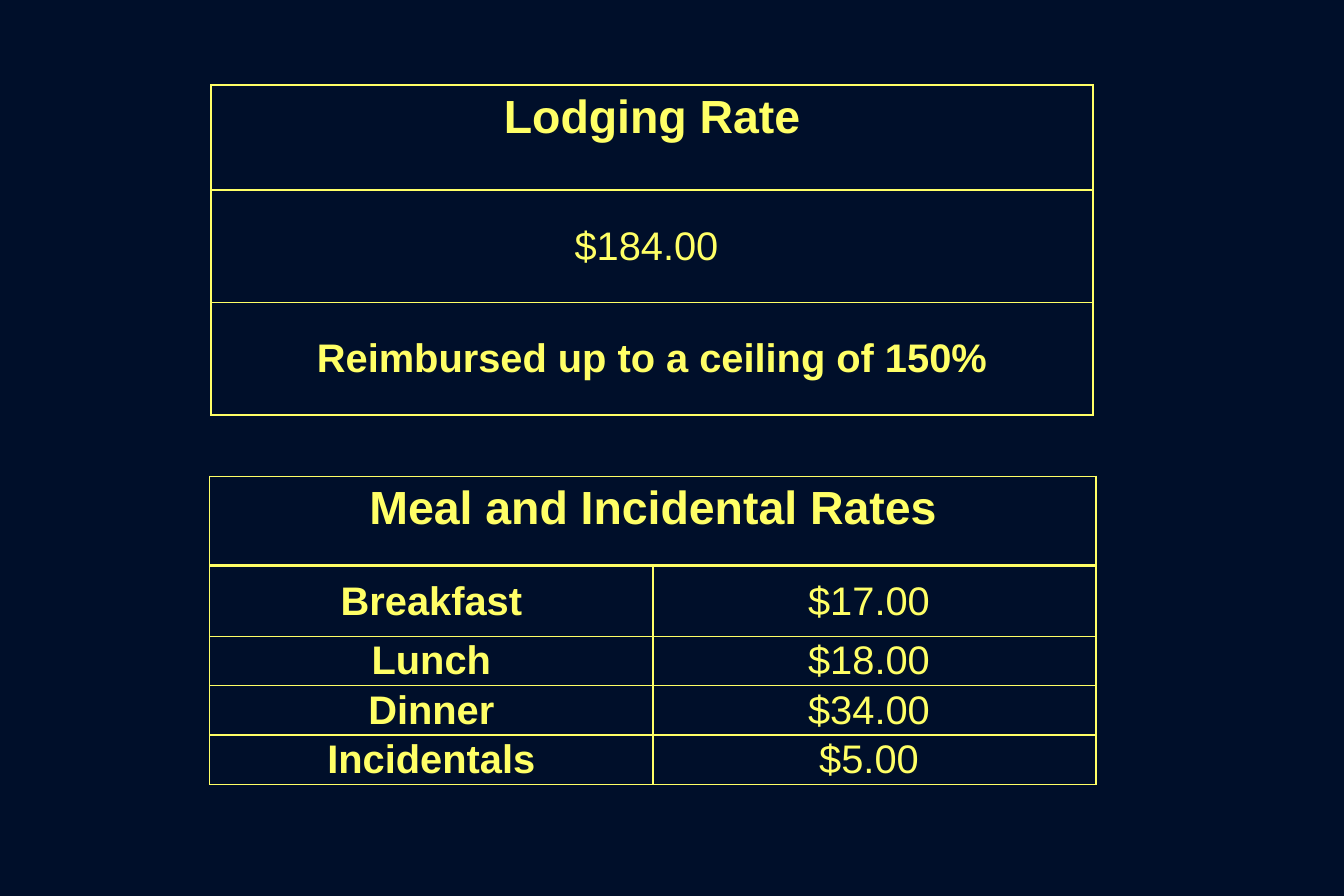
from lxml import etree
from pptx import Presentation
from pptx import util as u
from pptx.dml.color import RGBColor
from pptx.enum import text
from pptx.oxml import ns

# Content: each cell is a (text, style) pair
YELLOW, NAVY = "FFFF66", "000F2A"
STYLES = {
    "title": {"size": u.Pt(28), "bold": True},
    "label": {"size": u.Pt(24), "bold": True},
    "amount": {"size": u.Pt(24), "bold": False},
}
LODGING_TITLE = [[("Lodging Rate", "title")]]
LODGING_ROWS = [
    [("$184.00 ", "amount")],
    [("Reimbursed up to a ceiling of 150%", "label")],
]
MEAL_TITLE = [[("Meal and Incidental Rates", "title")]]
MEAL_RATES = [("Breakfast", "$17.00 "), ("Lunch", "$18.00 "),
              ("Dinner", "$34.00 "), ("Incidentals", "$5.00 ")]
MEAL_ROWS = [[(meal, "label"), (rate, "amount")] for meal, rate in MEAL_RATES]

# Layout in cm: rows, left, top, width, row heights
TABLES = [
    (LODGING_TITLE, 4.49, 1.81, 18.75, [2.23]),
    (LODGING_ROWS, 4.49, 4.04, 18.75, [2.39] * 2),
    (MEAL_TITLE, 4.46, 10.13, 18.85, [1.88]),
    (MEAL_ROWS, 4.46, 12.04, 18.85, [1.49] + [1.05] * 3),
]
BODY_CELL = {
    "vertical_anchor": text.MSO_ANCHOR.MIDDLE,
    "margin_left": u.Cm(0.18), "margin_right": u.Cm(0.18),
    "margin_top": 0, "margin_bottom": 0,
}


def color(hex_string):
    return RGBColor.from_string(hex_string)


def apply(target, values):
    for name, value in values.items():
        setattr(target, name, value)


def add_borders(cell):
    properties = cell._tc.get_or_add_tcPr()
    for index, side in enumerate(("lnL", "lnR", "lnT", "lnB")):
        line = etree.Element(ns.qn("a:" + side), w=str(u.Pt(1)))
        fill = etree.SubElement(line, ns.qn("a:solidFill"))
        etree.SubElement(fill, ns.qn("a:srgbClr"), val=YELLOW)
        properties.insert(index, line)


def fill_cell(cell, words, style):
    cell.fill.background()
    add_borders(cell)
    if style != "title":
        apply(cell, BODY_CELL)
    paragraph = cell.text_frame.paragraphs[0]
    paragraph.alignment = text.PP_ALIGN.CENTER
    run = paragraph.add_run()
    run.text = words
    apply(run.font, {"name": "Arial", **STYLES[style]})
    run.font.color.rgb = color(YELLOW)


def add_rate_table(slide, rows, left, top, width, heights):
    columns = len(rows[0])
    frame = slide.shapes.add_table(len(rows), columns, u.Cm(left), u.Cm(top),
                                   u.Cm(width), u.Cm(sum(heights)))
    table = frame.table
    apply(table, {"first_row": False, "horz_banding": False})
    for column in table.columns:
        column.width = u.Cm(width / columns)
    for row, height, contents in zip(table.rows, heights, rows):
        row.height = u.Cm(height)
        for cell, (words, style) in zip(row.cells, contents):
            fill_cell(cell, words, style)


def main():
    presentation = Presentation()
    apply(presentation, {"slide_width": u.Cm(28.58), "slide_height": u.Cm(19.05)})
    slide = presentation.slides.add_slide(presentation.slide_layouts[6])
    background = slide.background.fill
    background.solid()
    background.fore_color.rgb = color(NAVY)
    for layout in TABLES:
        add_rate_table(slide, *layout)
    presentation.save("out.pptx")


if __name__ == "__main__":
    main()
